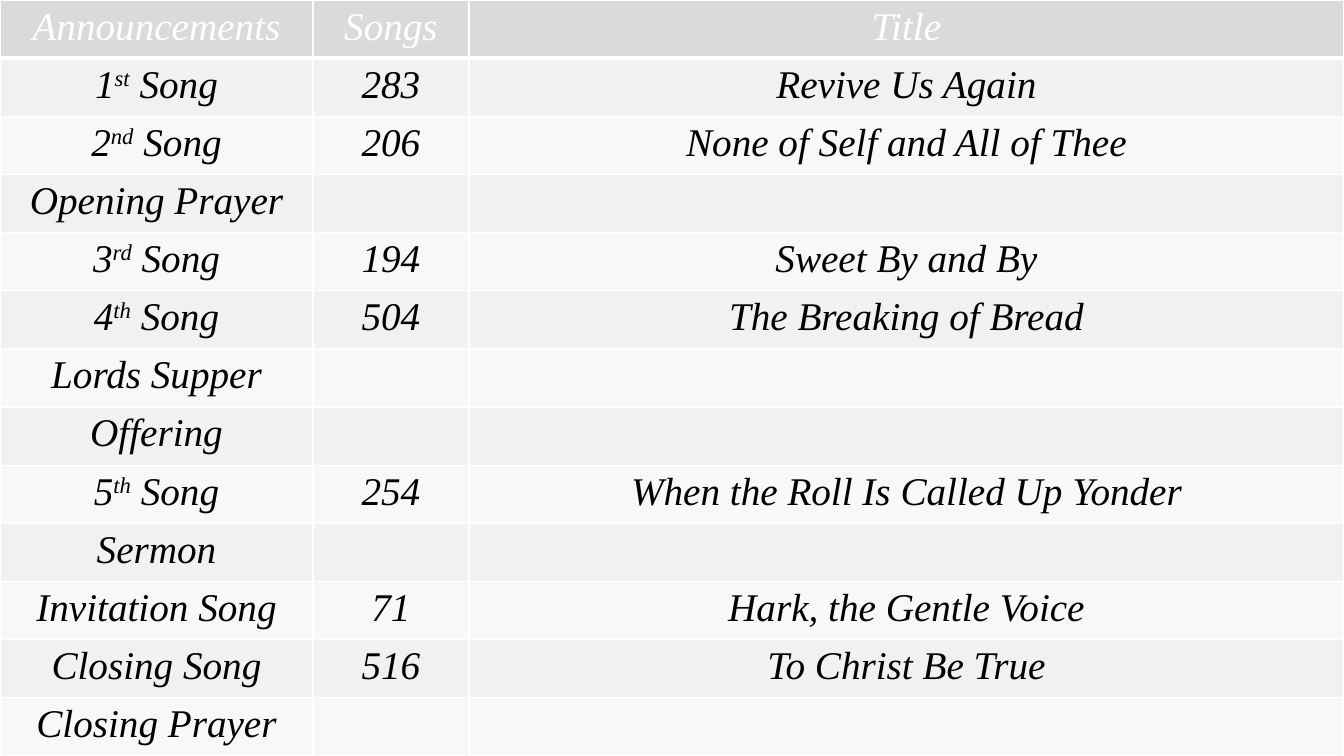
from lxml.etree import SubElement
from pptx import Presentation
from pptx.dml.color import RGBColor
from pptx.enum.text import PP_ALIGN
from pptx.oxml.ns import qn
from pptx.util import Pt

SCALE = 914400 / 100.8
COLORS = {
    "back": "000000", "line": "FFFFFF", "head": "DADADA",
    "odd": "F1F1F1", "even": "F8F8F8", "title": "FFFFFF", "text": "000000",
}
FORMAT = {"name": "Times New Roman", "size": Pt(28), "italic": True, "bold": False}
WIDTHS = [313, 156, 875]
HEIGHT = 756
ORDER = [
    ("Announcements", "Songs", "Title"),
    ("1|st| Song", "283", "Revive Us Again"),
    ("2|nd| Song", "206", "None of Self and All of Thee"),
    ("Opening Prayer", "", ""),
    ("3|rd| Song", "194", "Sweet By and By"),
    ("4|th| Song", "504", "The Breaking of Bread"),
    ("Lords Supper", "", ""),
    ("Offering", "", ""),
    ("5|th| Song", "254", "When the Roll Is Called Up Yonder"),
    ("Sermon", "", ""),
    ("Invitation Song", "71", "Hark, the Gentle Voice"),
    ("Closing Song", "516", "To Christ Be True"),
    ("Closing Prayer", "", ""),
]


def px(count):
    return round(count * SCALE)


def border(cell, side, points):
    line = SubElement(cell._tc.get_or_add_tcPr(), qn("a:ln" + side), w=str(Pt(points)))
    fill = SubElement(line, qn("a:solidFill"))
    SubElement(fill, qn("a:srgbClr"), val=COLORS["line"])


deck = Presentation()
deck.slide_width, deck.slide_height = px(sum(WIDTHS)), px(HEIGHT)
slide = deck.slides.add_slide(deck.slide_layouts[6])
back = slide.background.fill
back.solid()
back.fore_color.rgb = RGBColor.from_string(COLORS["back"])

frame = slide.shapes.add_table(
    len(ORDER), len(WIDTHS), 0, 0, px(sum(WIDTHS)), px(HEIGHT))
table = frame.table
for column, width in zip(table.columns, WIDTHS):
    column.width = px(width)

for row, words in enumerate(ORDER):
    table.rows[row].height = px(HEIGHT / len(ORDER))
    shade = "head" if row == 0 else "odd" if row % 2 else "even"
    ink = "text" if row else "title"
    for col, label in enumerate(words):
        cell = table.cell(row, col)
        for side in "LRTB":
            border(cell, side, 3 if row == 0 and side == "B" else 1)
        cell.fill.solid()
        cell.fill.fore_color.rgb = RGBColor.from_string(COLORS[shade])
        if not label:
            continue
        para = cell.text_frame.paragraphs[0]
        para.alignment = PP_ALIGN.CENTER
        for part, piece in enumerate(label.split("|")):
            run = para.add_run()
            run.text = piece
            for key, value in FORMAT.items():
                setattr(run.font, key, value)
            run.font.color.rgb = RGBColor.from_string(COLORS[ink])
            if part == 1:
                run._r.get_or_add_rPr().set("baseline", "30000")

deck.save("out.pptx")
